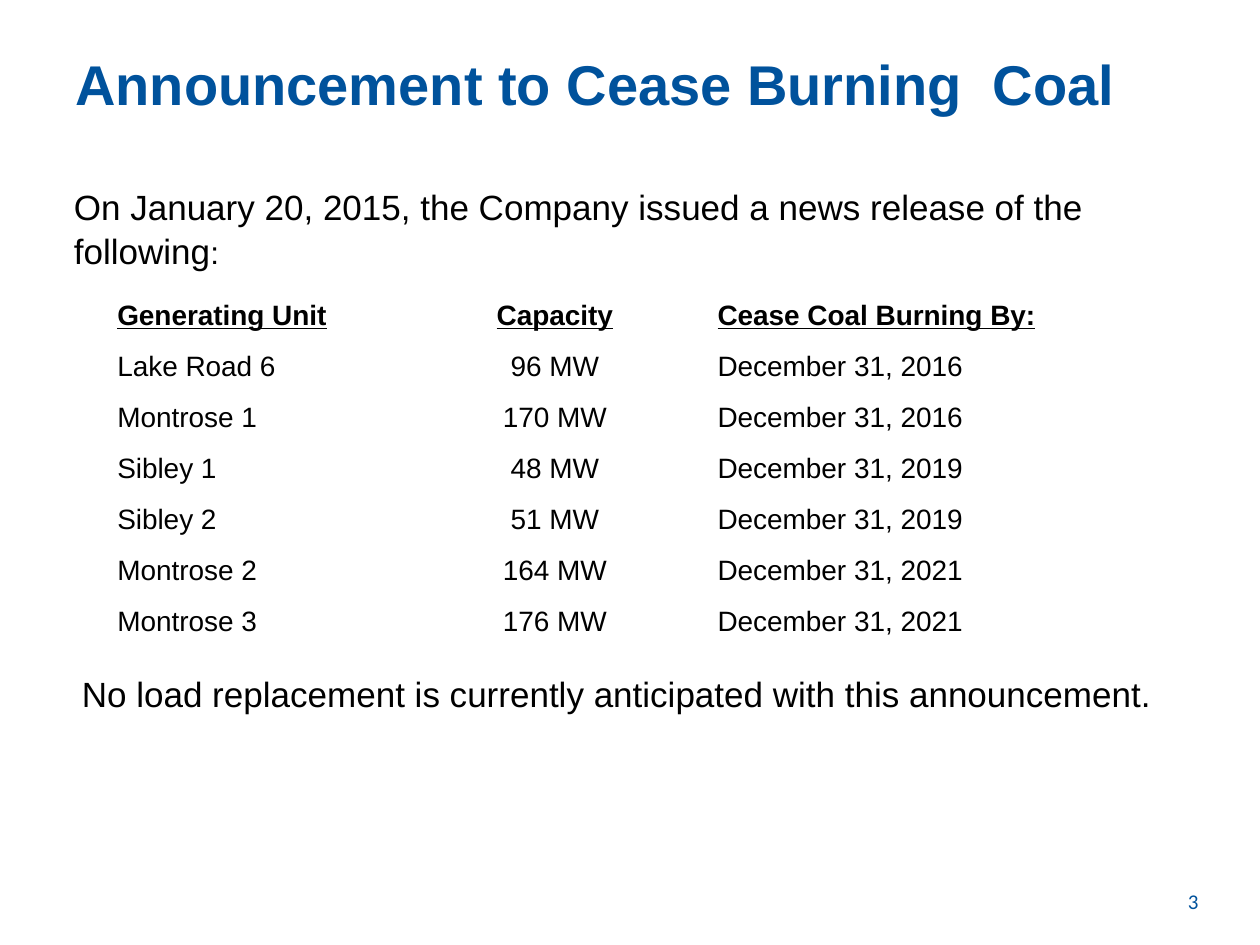
import pptx
import pptx.util
import pptx.dml.color
import pptx.enum.text
import pptx.oxml
import pptx.oxml.ns

Cm = pptx.util.Cm
Pt = pptx.util.Pt
ALIGN = pptx.enum.text.PP_ALIGN
ANCHOR = pptx.enum.text.MSO_ANCHOR

BLUE = pptx.dml.color.RGBColor(0x00, 0x52, 0x9C)
BLACK = pptx.dml.color.RGBColor(0x00, 0x00, 0x00)
WHITE = pptx.dml.color.RGBColor(0xFF, 0xFF, 0xFF)

UNITS = [
    ("Generating Unit", "Capacity", "Cease Coal Burning By:"),
    ("Lake Road 6", "96 MW", "December 31, 2016"),
    ("Montrose 1", "170 MW", "December 31, 2016"),
    ("Sibley 1", "48 MW", "December 31, 2019"),
    ("Sibley 2", "51 MW", "December 31, 2019"),
    ("Montrose 2", "164 MW", "December 31, 2021"),
    ("Montrose 3", "176 MW", "December 31, 2021"),
]
COLUMN_WIDTHS = [Cm(6.05), Cm(6.05), Cm(7.39)]
COLUMN_ALIGNS = [ALIGN.LEFT, ALIGN.CENTER, ALIGN.LEFT]


def style_run(r, size, color=BLACK, name="Arial", bold=False, underline=False):
    r.font.name = name
    r.font.size = Pt(size)
    r.font.color.rgb = color
    r.font.bold = bold
    r.font.underline = underline


def add_text(s, left, top, width, height, lines, size, margin_top=Cm(0.13), **style):
    sp = s.shapes.add_textbox(left, top, width, height)
    tf = sp.text_frame
    tf.word_wrap = True
    tf.margin_top = margin_top
    tf.text = "\n".join(lines)
    for p in tf.paragraphs:
        for r in p.runs:
            style_run(r, size, **style)
    return tf


def add_body(s):
    lines = [
        "On January 20, 2015, the Company issued a news release of the following",
        "No load replacement is currently anticipated with this announcement.",
    ]
    tf = add_text(s, Cm(1.24), Cm(2.72), Cm(23.52), Cm(15.44), lines, 20,
                  margin_top=Cm(0.98))
    intro, closing = tf.paragraphs
    r = intro.add_run()
    r.text = ":"
    style_run(r, 18)
    for p in tf.paragraphs:
        p.line_spacing = 1.05
    closing.space_before = Pt(228)
    closing._p.get_or_add_pPr().set("marL", str(Cm(0.16)))


def set_borders(cell, bottom):
    tcPr = cell._tc.get_or_add_tcPr()
    widths = {"lnL": 1, "lnR": 1, "lnT": 1, "lnB": bottom}
    for i, (tag, width) in enumerate(widths.items()):
        ln = pptx.oxml.parse_xml(
            f'<a:{tag} {pptx.oxml.ns.nsdecls("a")} w="{Pt(width)}">'
            f'<a:solidFill><a:srgbClr val="{WHITE}"/></a:solidFill></a:{tag}>')
        tcPr.insert(i, ln)


def add_units_table(s):
    row_height = Cm(1.03)
    table = s.shapes.add_table(
        len(UNITS), len(COLUMN_WIDTHS), Cm(2.11), Cm(5.92),
        sum(COLUMN_WIDTHS), row_height * len(UNITS)).table
    for column, width in zip(table.columns, COLUMN_WIDTHS):
        column.width = width
    for i, values in enumerate(UNITS):
        header = i == 0
        table.rows[i].height = row_height
        for j, value in enumerate(values):
            cell = table.cell(i, j)
            cell.fill.background()
            set_borders(cell, 3 if header else 1)
            cell.text_frame.text = value
            p = cell.text_frame.paragraphs[0]
            p.alignment = COLUMN_ALIGNS[j]
            style_run(p.runs[0], 16, bold=header, underline=header)


def add_page_number(s):
    tf = add_text(s, Cm(18.49), Cm(17.65), Cm(5.92), Cm(1.02), ["3"], 12,
                  color=BLUE, name="Calibri")
    tf.vertical_anchor = ANCHOR.MIDDLE
    tf.paragraphs[0].alignment = ALIGN.RIGHT


def main():
    prs = pptx.Presentation()
    prs.slide_width = Cm(25.4)
    prs.slide_height = Cm(19.05)
    s = prs.slides.add_slide(prs.slide_layouts[6])
    add_page_number(s)
    add_body(s)
    add_units_table(s)
    add_text(s, Cm(1.27), Cm(0.76), Cm(22.86), Cm(3.18),
             ["Announcement to Cease Burning  Coal"], 32,
             margin_top=Cm(0.24), color=BLUE, bold=True)
    prs.save("out.pptx")


if __name__ == "__main__":
    main()
